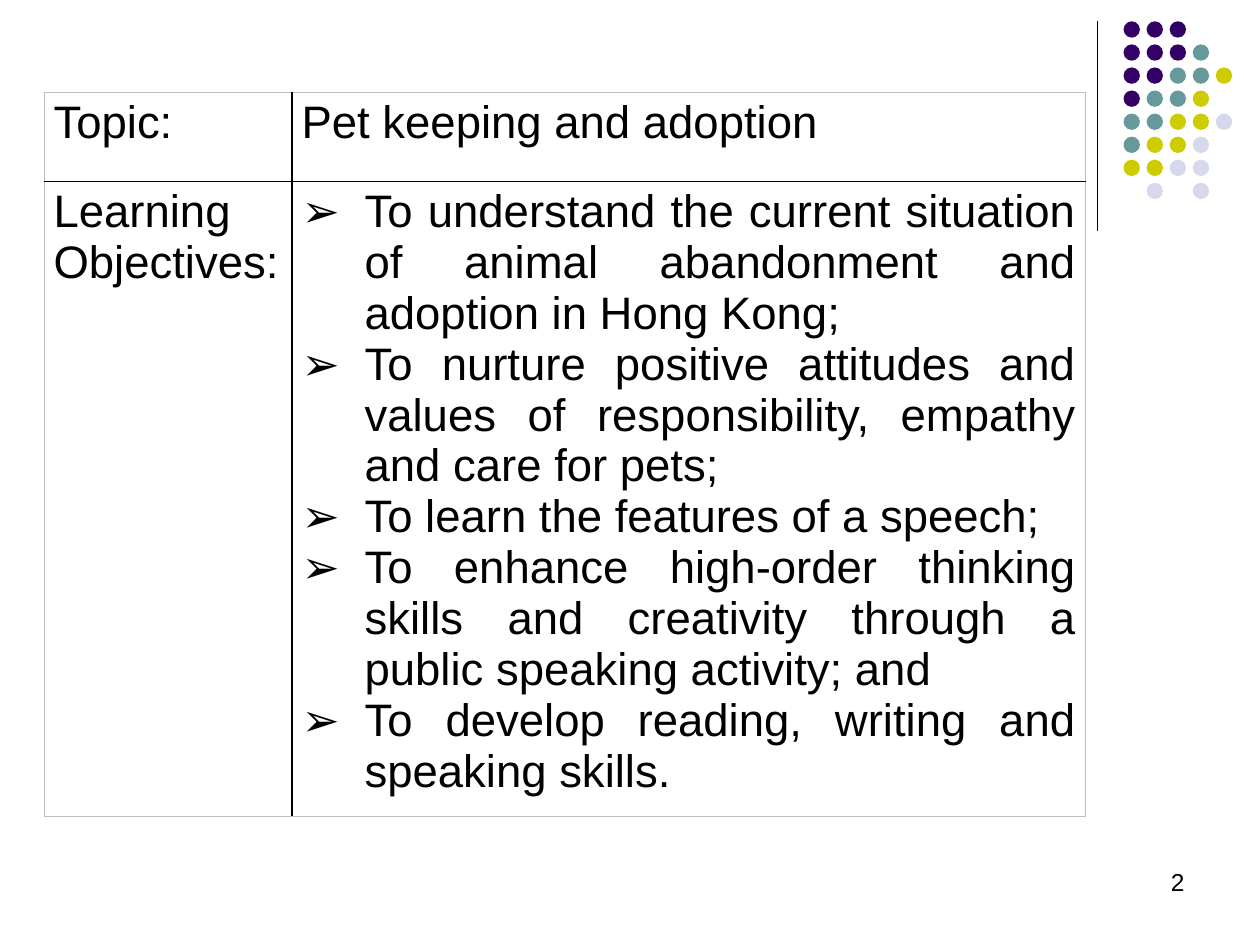
from lxml import etree
from pptx import Presentation
from pptx import util as u
from pptx.dml.color import RGBColor
from pptx.enum import shapes, text
from pptx.oxml.ns import qn

DOT_COLOURS = {"P": "330066", "T": "669999", "Y": "CCCC00", "L": "D8D8EC"}
DOT_ROWS = ["PPP", "PPPT", "PPTTY", "PTTY", "TTYYL", "TYYL", "YYLL", " L L"]
OBJECTIVES = [
    "To understand the current situation of animal abandonment and adoption in Hong Kong;",
    "To nurture positive attitudes and values of responsibility, empathy and care for pets; ",
    "To learn the features of a speech; ",
    "To enhance high-order thinking skills and creativity through a public speaking activity; and",
    "To develop reading, writing and speaking skills.",
]


def colour(hex_code):
    return RGBColor.from_string(hex_code)


def write(frame, lines, size, align=text.PP_ALIGN.LEFT, bullet=None, indent=0):
    """Fill a text frame with one paragraph for each line."""
    frame.word_wrap = True
    for index, line in enumerate(lines):
        para = frame.add_paragraph() if index else frame.paragraphs[0]
        para.alignment = align
        span = para.add_run()
        span.text = line
        span.font.size = u.Pt(size)
        span.font.name = "Arial"
        span.font.color.rgb = colour("000000")
        if bullet:
            props = para._p.get_or_add_pPr()
            props.set("marL", str(u.Cm(indent)))
            props.set("indent", str(-u.Cm(indent)))
            etree.SubElement(props, qn("a:buFont"), typeface="Arial")
            etree.SubElement(props, qn("a:buChar"), char=bullet)


def set_borders(cell, edges):
    """Draw cell edges, given as side: (colour, points)."""
    props = cell._tc.get_or_add_tcPr()
    for index, side in enumerate(("L", "R", "T", "B")):
        hex_code, points = edges[side]
        line = etree.Element(qn("a:ln" + side), w=str(u.Pt(points)))
        fill = etree.SubElement(line, qn("a:solidFill"))
        etree.SubElement(fill, qn("a:srgbClr"), val=hex_code)
        props.insert(index, line)


def add_decoration(page, left, top, height):
    """Vertical rule with a grid of coloured dots to its right."""
    rule = page.shapes.add_connector(
        shapes.MSO_CONNECTOR.STRAIGHT,
        u.Cm(left), u.Cm(top), u.Cm(left), u.Cm(top + height))
    rule.line.color.rgb = colour("000000")
    rule.line.width = u.Pt(0.75)
    etree.SubElement(rule._element.spPr, qn("a:effectLst"))

    dots = page.shapes.add_group_shape()
    gap, pitch, size = 0.53, 0.465, 0.33
    for row, codes in enumerate(DOT_ROWS):
        for column, code in enumerate(codes):
            if code == " ":
                continue
            dot = dots.shapes.add_shape(
                shapes.MSO_SHAPE.OVAL,
                u.Cm(left + gap + column * pitch), u.Cm(top + row * pitch),
                u.Cm(size), u.Cm(size))
            dot.shadow.inherit = False
            dot.fill.solid()
            dot.fill.fore_color.rgb = colour(DOT_COLOURS[code])
            dot.line.fill.background()


def add_lesson_table(page, left, top, widths, heights):
    table = page.shapes.add_table(
        len(heights), len(widths), u.Cm(left), u.Cm(top),
        u.Cm(sum(widths)), u.Cm(sum(heights))).table
    for column, width in zip(table.columns, widths):
        column.width = u.Cm(width)
    for row, height in zip(table.rows, heights):
        row.height = u.Cm(height)

    inner, outer = ("000000", 1), ("BFBFBF", 0.5)
    contents = [[["Topic:"], ["Pet keeping and adoption"]],
                [["Learning Objectives:"], OBJECTIVES]]
    for r, row in enumerate(contents):
        for c, lines in enumerate(row):
            cell = table.cell(r, c)
            cell.fill.solid()
            cell.fill.fore_color.rgb = colour("FFFFFF")
            cell.margin_left = cell.margin_right = u.Cm(0.19)
            cell.margin_top = cell.margin_bottom = u.Cm(0.1)
            set_borders(cell, {"L": inner if c else outer,
                               "R": outer if c else inner,
                               "T": inner if r else outer,
                               "B": outer if r else inner})
            if lines is OBJECTIVES:
                write(cell.text_frame, lines, 26, align=text.PP_ALIGN.JUSTIFY,
                      bullet="➢", indent=1.27)
            else:
                write(cell.text_frame, lines, 26)


def add_page_number(page, left, top, width, height):
    box = page.shapes.add_textbox(u.Cm(left), u.Cm(top), u.Cm(width), u.Cm(height))
    write(box.text_frame, ["2"], 14, align=text.PP_ALIGN.RIGHT)


def main():
    deck = Presentation()
    deck.slide_width, deck.slide_height = u.Cm(25.4), u.Cm(19.05)
    page = deck.slides.add_slide(deck.slide_layouts.get_by_name("Blank"))
    add_decoration(page, left=22.12, top=0.43, height=4.22)
    add_lesson_table(page, left=0.89, top=1.86, widths=[5, 16], heights=[1.8, 12.8])
    add_page_number(page, left=18.2, top=17.35, width=5.93, height=1.27)
    deck.save("out.pptx")


if __name__ == "__main__":
    main()
